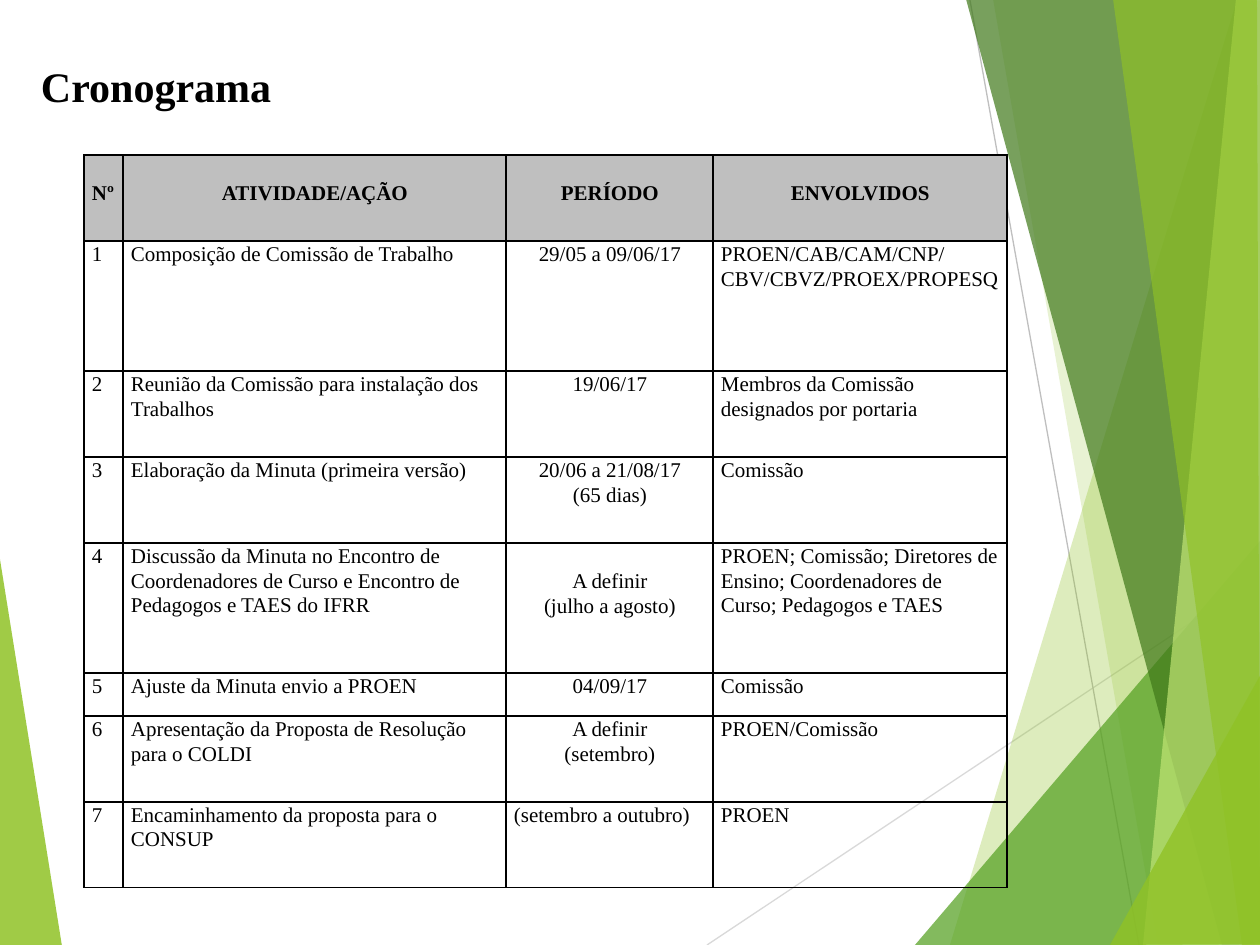
from lxml import etree
from pptx import Presentation
from pptx import util as u
from pptx.dml.color import RGBColor
from pptx.enum import shapes, text
from pptx.oxml.ns import qn

PX = 914400 / 126
FONT = "Times New Roman"
LEFT, CENTER = text.PP_ALIGN.LEFT, text.PP_ALIGN.CENTER

RAYS = [
    ("90C226", 85, [(-1, 553), (62, 946), (-1, 945)]),
    ("D9D9D9", None, [(707, 945), (1261, 576)]),
    ("BFBFBF", None, [(970, 0), (1139, 945)]),
    ("90C226", 30, [(1237, 0), (950, 945), (1262, 946), (1261, 1)]),
    ("90C226", 20, [(993, -1), (1158, 945), (1261, 945), (1261, -1)]),
    ("54A021", 72, [(915, 945), (1260, 541), (1261, 945)]),
    ("3F7819", 70, [(966, -1), (1222, 945), (1261, 944), (1261, -1)]),
    ("C0E474", 70, [(1236, -1), (1143, 945), (1261, 945), (1260, -1)]),
    ("90C226", 65, [(1113, -1), (1242, 945), (1260, 945), (1257, -1)]),
    ("90C226", 80, [(1110, 945), (1261, 674), (1261, 944)]),
]

COLUMN_WIDTHS = [39, 383, 207, 294]
ROW_HEIGHTS = [86, 130, 86, 86, 130, 43, 86, 86]
HEADINGS = ["Nº", "ATIVIDADE/AÇÃO", "PERÍODO", "ENVOLVIDOS"]
STEPS = [
    ("Composição de Comissão de Trabalho", "29/05 a 09/06/17",
     "PROEN/CAB/CAM/CNP/\nCBV/CBVZ/PROEX/PROPESQ"),
    ("Reunião da Comissão para instalação dos Trabalhos", "19/06/17",
     "Membros da Comissão designados por portaria"),
    ("Elaboração da Minuta (primeira versão)",
     "20/06 a 21/08/17\n(65 dias)", "Comissão"),
    ("Discussão da Minuta no Encontro de Coordenadores de Curso e "
     "Encontro de Pedagogos e TAES do IFRR", "A definir\n(julho a agosto)",
     "PROEN; Comissão; Diretores de Ensino; Coordenadores de Curso; "
     "Pedagogos e TAES"),
    ("Ajuste da Minuta envio a PROEN", "04/09/17", "Comissão"),
    ("Apresentação da Proposta de Resolução para o COLDI",
     "A definir\n(setembro)", "PROEN/Comissão"),
    ("Encaminhamento da proposta para o CONSUP", "(setembro a outubro)",
     "PROEN"),
]


def px(length):
    return u.Emu(round(length * PX))


def color(code):
    return RGBColor.from_string(code)


def apply(target, formats):
    for name, value in formats.items():
        setattr(target, name, value)


def write(frame, wording, size, bold, paragraph_format):
    frame.text = wording
    for paragraph in frame.paragraphs:
        apply(paragraph, paragraph_format)
        for run in paragraph.runs:
            apply(run.font, {"name": FONT, "size": u.Pt(size), "bold": bold})
            run.font.color.rgb = color("000000")


def add_thin_ray(slide, start, end, tint):
    ray = slide.shapes.add_connector(
        shapes.MSO_CONNECTOR.STRAIGHT, *map(px, start + end))
    ray.line.color.rgb = color(tint)
    ray.line.width = u.Pt(0.75)
    etree.SubElement(ray.element.spPr, qn("a:effectLst"))


def add_facet(slide, corners, tint, opacity):
    builder = slide.shapes.build_freeform(*corners[0], scale=PX)
    builder.add_line_segments(corners[1:], close=True)
    facet = builder.convert_to_shape()
    facet.shadow.inherit = False
    facet.line.fill.background()
    facet.fill.solid()
    facet.fill.fore_color.rgb = color(tint)
    tint_element = facet.element.spPr.find(".//" + qn("a:srgbClr"))
    etree.SubElement(tint_element, qn("a:alpha"), val=str(opacity * 1000))


def add_rays(slide):
    for tint, opacity, points in RAYS:
        if opacity is None:
            add_thin_ray(slide, *points, tint)
        else:
            add_facet(slide, points, tint, opacity)


def add_title(slide, wording):
    title = slide.shapes.add_textbox(px(29), px(16), px(1211), px(97))
    apply(title.text_frame, {"word_wrap": True, "margin_top": px(44),
                             "margin_left": px(12), "margin_bottom": px(5)})
    write(title.text_frame, wording, 24, True,
          {"alignment": text.PP_ALIGN.JUSTIFY})


def add_borders(cell):
    properties = cell._tc.get_or_add_tcPr()
    for position, side in enumerate(("a:lnL", "a:lnR", "a:lnT", "a:lnB")):
        border = etree.Element(qn(side), w=str(u.Pt(1)))
        fill = etree.SubElement(border, qn("a:solidFill"))
        etree.SubElement(fill, qn("a:srgbClr"), val="000000")
        properties.insert(position, border)


def fill_cell(cell, wording, alignment, top=0, heading=False):
    apply(cell, {"margin_left": px(8), "margin_right": px(7),
                 "margin_top": px(top), "margin_bottom": 0})
    write(cell.text_frame, wording, 12, heading,
          {"alignment": alignment, "line_spacing": 1.07})
    if heading:
        cell.fill.solid()
        cell.fill.fore_color.rgb = color("BFBFBF")
    else:
        cell.fill.background()
    add_borders(cell)


def add_schedule(slide):
    schedule = slide.shapes.add_table(
        len(ROW_HEIGHTS), len(COLUMN_WIDTHS), px(84), px(155),
        px(sum(COLUMN_WIDTHS)), px(sum(ROW_HEIGHTS))).table
    apply(schedule, {"first_row": False, "horz_banding": False})
    for column, width in zip(schedule.columns, COLUMN_WIDTHS):
        column.width = px(width)
    for row, height in zip(schedule.rows, ROW_HEIGHTS):
        row.height = px(height)
    for index, heading in enumerate(HEADINGS):
        fill_cell(schedule.cell(0, index), heading,
                  CENTER if index else LEFT, 25, True)
    for number, step in enumerate(STEPS, 1):
        for index, wording in enumerate((str(number), *step)):
            period = index == 2
            centered = period and number < len(STEPS)
            fill_cell(schedule.cell(number, index), wording,
                      CENTER if centered else LEFT,
                      25 if period and number == 4 else 0)


def main():
    deck = Presentation()
    apply(deck, {"slide_width": px(1260), "slide_height": px(945)})
    slide = deck.slides.add_slide(deck.slide_layouts[6])
    add_rays(slide)
    add_title(slide, "Cronograma")
    add_schedule(slide)
    deck.save("out.pptx")


if __name__ == "__main__":
    main()
